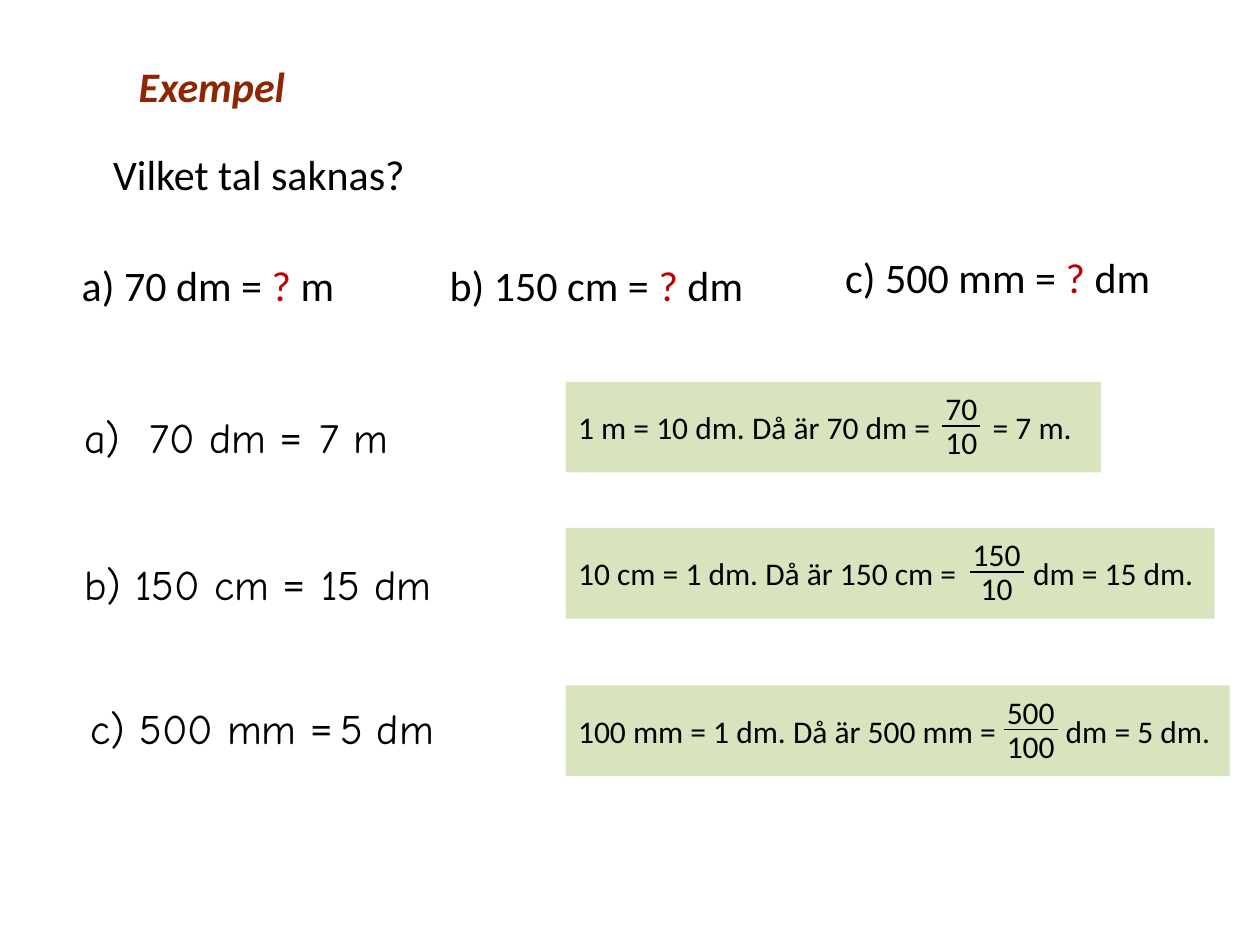
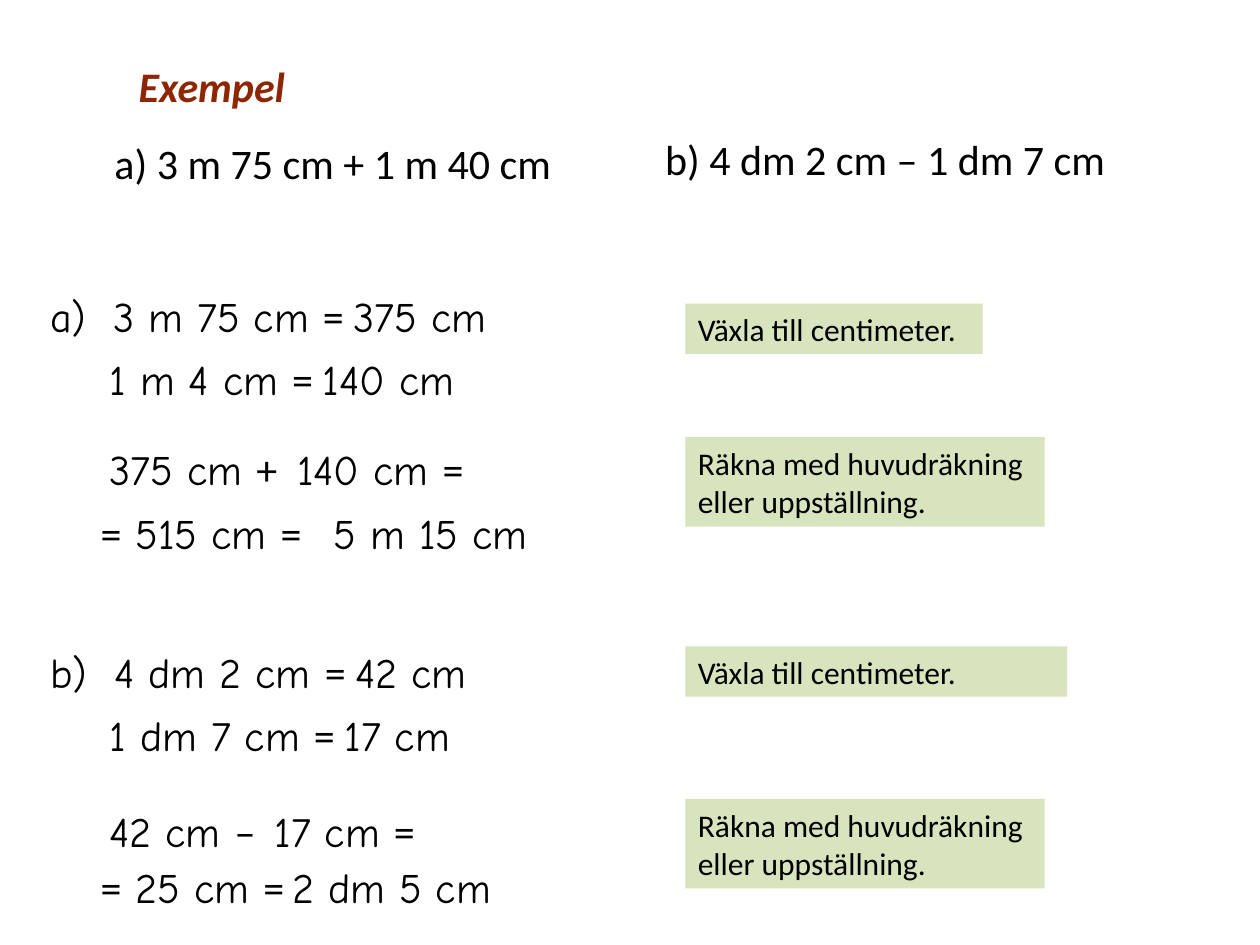
"""Build two worked-example slides about converting units of length."""
from lxml.etree import SubElement
from pptx import Presentation
from pptx.dml.color import RGBColor
from pptx.enum.shapes import MSO_CONNECTOR as Connector, MSO_SHAPE as Shape
from pptx.enum.text import MSO_ANCHOR as Anchor, MSO_AUTO_SIZE as AutoSize, PP_ALIGN as Align
from pptx.oxml.ns import qn
from pptx.util import Inches, Pt

COLUMNS, ROWS = 100, 75
BLACK, RED, BROWN, GREEN = "000000", "C00000", "8E2503", "D7E4BD"
PRINT, HAND = "Calibri", "Comic Neue"
LARGE, SMALL = 24, 18
LINE_HEIGHT, SMALL_HEIGHT, TWO_LINES = 5, 4, 7.1


def colour(value):
    return RGBColor.from_string(value)


class Lesson:
    def __init__(self):
        self.deck = Presentation()
        self.deck.slide_width, self.deck.slide_height = Inches(10), Inches(7.5)
        self.page = None

    def across(self, columns):
        return int(self.deck.slide_width * columns / COLUMNS)

    def down(self, rows):
        return int(self.deck.slide_height * rows / ROWS)

    def place(self, left, top, width, height):
        return self.across(left), self.down(top), self.across(width), self.down(height)

    def style(self, span, size, font=PRINT, ink=BLACK):
        span.font.size, span.font.name = Pt(size), font
        span.font.color.rgb = colour(ink)

    def fill_text(self, box, text, size, plain=(PRINT, BLACK), marked=(PRINT, RED), tab=None):
        frame = box.text_frame
        frame.word_wrap = True
        para = frame.paragraphs[0]
        para.alignment = Align.LEFT
        if tab:
            stops = SubElement(para._p.get_or_add_pPr(), qn("a:tabLst"))
            SubElement(stops, qn("a:tab"), pos=str(self.across(tab)), algn="l")
        for index, piece in enumerate(text.split("|")):
            if piece:
                span = para.add_run()
                span.text = piece
                self.style(span, size, *(marked if index % 2 else plain))
        return para

    def start(self, title):
        self.page = self.deck.slides.add_slide(self.deck.slide_layouts[5])
        box = self.page.shapes.title
        box.left, box.top, box.width, box.height = self.place(10, 4.3, 13.9, LINE_HEIGHT)
        frame = box.text_frame
        frame.auto_size, frame.vertical_anchor = AutoSize.NONE, Anchor.TOP
        para = self.fill_text(box, title, LARGE, (PRINT, BROWN))
        font = para.runs[0].font
        font.bold = font.italic = True

    def question(self, left, top, width, text):
        box = self.page.shapes.add_textbox(*self.place(left, top, width, LINE_HEIGHT))
        self.fill_text(box, text, LARGE)

    def handwriting(self, left, top, text, tab=None, width=42.3):
        box = self.page.shapes.add_textbox(*self.place(left, top, width, LINE_HEIGHT))
        self.fill_text(box, text, LARGE, (HAND, BLACK), (PRINT, BLACK), tab)

    def note(self, left, top, width, height, text, tab=None):
        box = self.page.shapes.add_shape(Shape.RECTANGLE, *self.place(left, top, width, height))
        box.shadow.inherit = False
        box.fill.solid()
        box.fill.fore_color.rgb = colour(GREEN)
        box.line.fill.background()
        box.text_frame.vertical_anchor = Anchor.MIDDLE
        self.fill_text(box, text, SMALL, tab=tab)

    def fraction(self, centre, middle, bar, numerator, denominator):
        width = 6.1
        for text, top in ((numerator, middle - 3.4), (denominator, middle - 0.7)):
            box = self.page.shapes.add_textbox(
                *self.place(centre - width / 2, top, width, SMALL_HEIGHT))
            self.fill_text(box, text, SMALL).alignment = Align.CENTER
        line = self.page.shapes.add_connector(
            Connector.STRAIGHT, self.across(centre - bar / 2), self.down(middle),
            self.across(centre + bar / 2), self.down(middle))
        line.line.color.rgb, line.line.width = colour(BLACK), Pt(1)
        SubElement(line._element.spPr, qn("a:effectLst"))


def missing_numbers(lesson):
    lesson.start("Exempel")
    lesson.question(8, 11.3, 52.4, "Vilket tal saknas?")
    for left, top, text in (
        (5.5, 20.1, "a) 70 dm = |?| m"),
        (34.7, 20.1, "b) 150 cm = |?| dm"),
        (66.1, 19.5, "c) 500 mm = |?| dm"),
    ):
        lesson.question(left, top, 31.5, text)
    for left, top, text, tab, answer_left, answer in (
        (5.7, 32.2, "a)\t70 dm |=", 5.2, 24.4, "7 m"),
        (5.7, 43.8, "b) 150 cm |=", None, 24.5, "15 dm"),
        (6.2, 55.3, "c) 500 mm |=", None, 26, "5 dm"),
    ):
        lesson.handwriting(left, top, text, tab, 27.5)
        lesson.handwriting(answer_left, top, answer, width=13.9)
    for top, width, text, tab, centre, bar, numerator, denominator in (
        (30.3, 42.5, "1 m = 10 dm. Då är 70 dm =\t= 7 m.", 32.9, 76.3, 3, "70", "10"),
        (41.9, 51.5, "10 cm = 1 dm. Då är 150 cm =\tdm = 15 dm.", 36.1, 79.1, 4.3, "150", "10"),
        (54.4, 52.7, "100 mm = 1 dm. Då är 500 mm =\tdm = 5 dm.", 38.7, 81.8, 4.3, "500", "100"),
    ):
        lesson.note(44.9, top, width, 7.2, text, tab)
        lesson.fraction(centre, top + 3.5, bar, numerator, denominator)


def sums_and_differences(lesson):
    lesson.start("Exempel")
    lesson.question(8.1, 10.4, 38.8, "a) 3 m 75 cm + 1 m 40 cm")
    lesson.question(51.8, 10.1, 42.3, "b) 4 dm 2 cm – 1 dm 7 cm")
    label, step, result = 3, 7.7, 7
    for left, top, text, tab in (
        (label, 22.6, "a)\t3 m 75 cm |= |375 cm", 5),
        (step, 27.6, "1 m 4 cm |= |140 cm", None),
        (step, 34.7, "375 cm |+\t|140 cm |=", 14.9),
        (result, 39.8, "|=| 515 cm |=", None),
        (25.5, 39.8, "5 m 15 cm", None),
        (label, 50.8, "b)\t4 dm 2 cm |= |42 cm", 5.1),
        (step, 55.8, "1 dm 7 cm |= |17 cm", None),
        (step, 63.4, "42 cm |–\t|17 cm |=", 13.1),
        (result, 67.9, "|=| 25 cm |=", None),
        (22.2, 67.9, "2 dm 5 cm", None),
    ):
        lesson.handwriting(left, top, text, tab)
    for convert_top, convert_width, count_top in ((24.1, 23.6, 34.7), (51.3, 30.3, 63.4)):
        lesson.note(54.4, convert_top, convert_width, SMALL_HEIGHT, "Växla till centimeter.")
        lesson.note(54.4, count_top, 28.5, TWO_LINES, "Räkna med huvudräkning eller uppställning.")


def main():
    lesson = Lesson()
    missing_numbers(lesson)
    sums_and_differences(lesson)
    lesson.deck.save("out.pptx")


if __name__ == "__main__":
    main()
